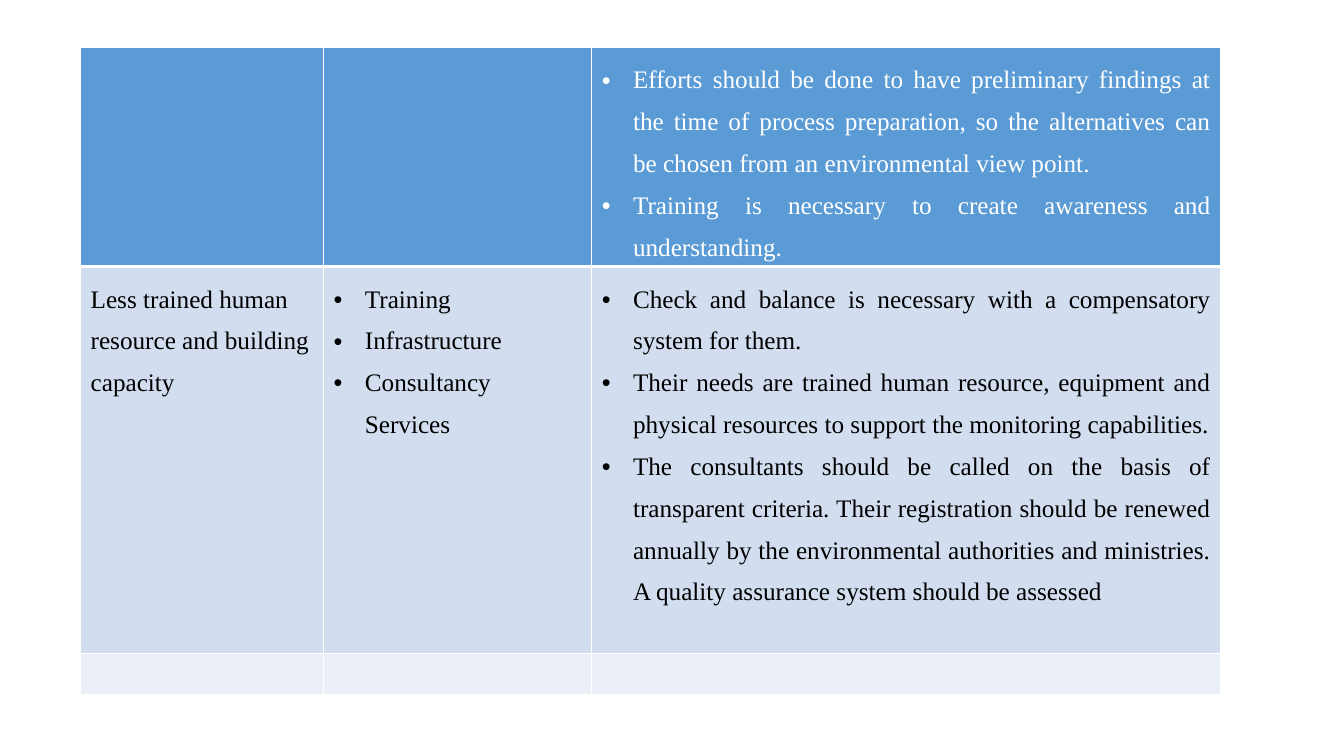
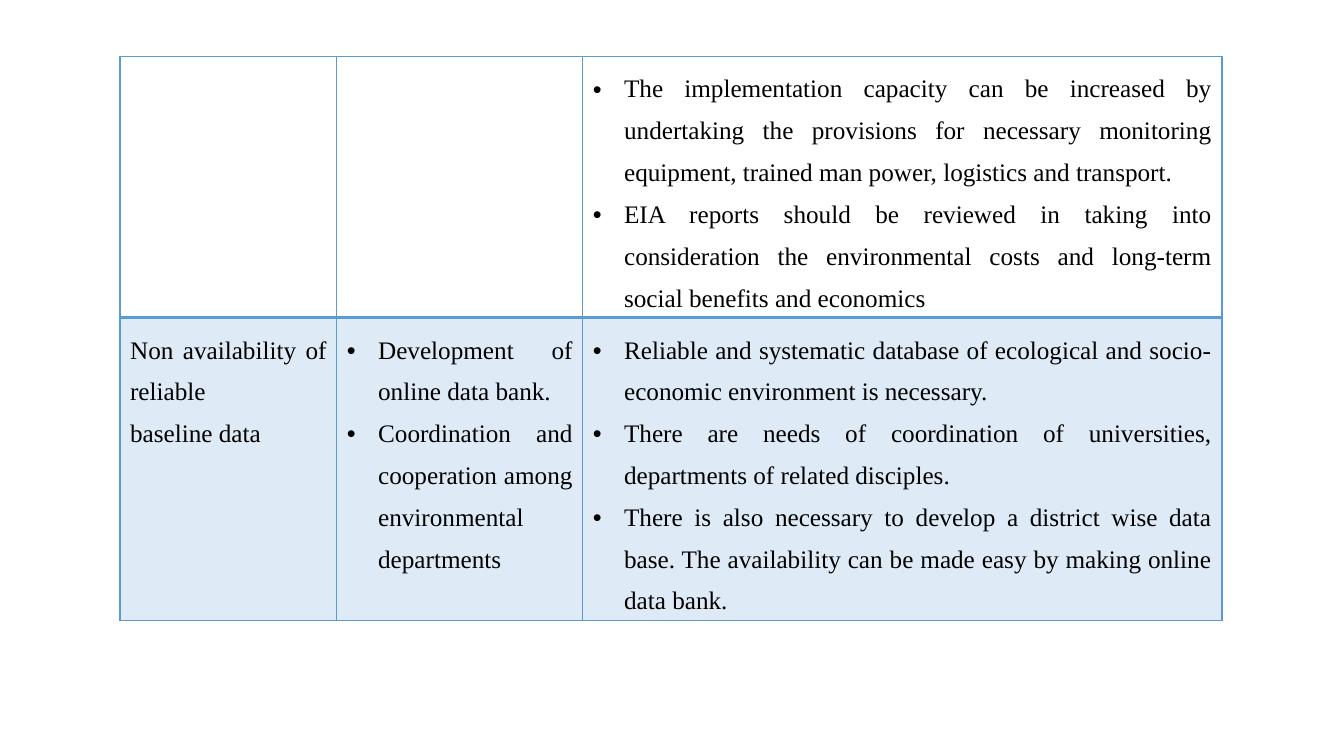
from dataclasses import dataclass
from typing import Optional

from lxml.etree import SubElement
from pptx import Presentation
from pptx.dml.color import RGBColor as RGB
from pptx.enum.text import PP_ALIGN as Align
from pptx.oxml.ns import qn
from pptx.util import Inches, Pt

COLORS = {
    "accent": "5B9BD5",
    "band": "D2DEEF",
    "pale": "EAEFF7",
    "white": "FFFFFF",
    "black": "000000",
}
FONT = "Times New Roman"
WIDTH, HEIGHT = Inches(13.33), Inches(7.5)
INDENT = Inches(0.31)


@dataclass(frozen=True)
class Cell:
    lines: tuple[str, ...] = ()
    bullet: bool = True


@dataclass(frozen=True)
class Row:
    height: float
    cells: tuple[Cell, ...]
    fill: Optional[str] = None
    alpha: int = 100
    color: str = "black"


@dataclass(frozen=True)
class Grid:
    left: float
    top: float
    columns: tuple[float, ...]
    rows: tuple[Row, ...]
    border: str
    header_rule: float


EMPTY = Cell()

GRIDS = (
    Grid(6, 6.27, (18.08, 19.95, 46.81), (
        Row(28.93, (EMPTY, EMPTY, Cell((
            "Efforts should be done to have preliminary findings at the time of process preparation, "
            "so the alternatives can be chosen from an environmental view point.",
            "Training is necessary to create awareness and understanding.",
        ))), fill="accent", color="white"),
        Row(51.2, (
            Cell(("Less trained human", "resource and building", "capacity"), bullet=False),
            Cell(("Training", "Infrastructure", "Consultancy Services")),
            Cell((
                "Check and balance is necessary with a compensatory system for them.",
                "Their needs are trained human resource, equipment and physical resources "
                "to support the monitoring capabilities.",
                "The consultants should be called on the basis of transparent criteria. "
                "Their registration should be renewed annually by the environmental authorities "
                "and ministries. A quality assurance system should be assessed",
            )),
        ), fill="band"),
        Row(5.47, (EMPTY, EMPTY, EMPTY), fill="pale"),
    ), border="white", header_rule=3),
    Grid(8.93, 7.47, (16.13, 18.3, 47.56), (
        Row(34.53, (EMPTY, EMPTY, Cell((
            "The implementation capacity can be increased by undertaking the provisions for "
            "necessary monitoring equipment, trained man power, logistics and transport.",
            "EIA reports should be reviewed in taking into consideration the environmental costs "
            "and long-term social benefits and economics",
        )))),
        Row(40, (
            Cell(("Non availability of reliable", "baseline data"), bullet=False),
            Cell((
                "Development of online data bank.",
                "Coordination and cooperation among environmental departments",
            )),
            Cell((
                "Reliable and systematic database of ecological and socio-economic environment is necessary.",
                "There are needs of coordination of universities, departments of related disciples.",
                "There is also necessary to develop a district wise data base. "
                "The availability can be made easy by making online data bank.",
            )),
        ), fill="accent", alpha=20),
    ), border="accent", header_rule=2),
)


def across(share: float) -> int:
    return round(WIDTH * share / 100)


def down(share: float) -> int:
    return round(HEIGHT * share / 100)


def add_text(p, text: str, *, color: str, bullet: bool = False, size: float = 18) -> None:
    p.alignment = Align.JUSTIFY
    p.line_spacing = 1.5
    if bullet:
        props = p._p.get_or_add_pPr()
        props.set("marL", str(INDENT))
        props.set("indent", str(-INDENT))
        SubElement(props, qn("a:buFont"), typeface="Arial")
        SubElement(props, qn("a:buChar"), char="•")
    r = p.add_run()
    r.text = text
    r.font.name, r.font.size = FONT, Pt(size)
    r.font.color.rgb = RGB.from_string(COLORS[color])


def set_borders(cell, color: str, top: float, bottom: float) -> None:
    props = cell._tc.get_or_add_tcPr()
    for side, width in {"L": 1, "R": 1, "T": top, "B": bottom}.items():
        line = SubElement(props, qn(f"a:ln{side}"), w=str(Pt(width)))
        SubElement(SubElement(line, qn("a:solidFill")), qn("a:srgbClr"), val=COLORS[color])


def set_fill(cell, row: Row) -> None:
    if row.fill is None:
        cell.fill.background()
        return
    cell.fill.solid()
    cell.fill.fore_color.rgb = RGB.from_string(COLORS[row.fill])
    if row.alpha < 100:
        tint = cell._tc.tcPr.find(f"{qn('a:solidFill')}/{qn('a:srgbClr')}")
        SubElement(tint, qn("a:alpha"), val=str(row.alpha * 1000))


def add_grid(s, grid: Grid) -> None:
    frame = s.shapes.add_table(
        len(grid.rows), len(grid.columns), across(grid.left), down(grid.top),
        across(sum(grid.columns)), down(sum(row.height for row in grid.rows)))
    table = frame.table
    table.first_row = table.horz_banding = False
    for column, share in zip(table.columns, grid.columns):
        column.width = across(share)
    for i, row in enumerate(grid.rows):
        table.rows[i].height = down(row.height)
        top = grid.header_rule if i == 1 else 1
        bottom = grid.header_rule if i == 0 else 1
        for j, content in enumerate(row.cells):
            cell = table.cell(i, j)
            set_borders(cell, grid.border, top, bottom)
            set_fill(cell, row)
            tf = cell.text_frame
            for k, line in enumerate(content.lines):
                p = tf.add_paragraph() if k else tf.paragraphs[0]
                add_text(p, line, color=row.color, bullet=content.bullet)


def main() -> None:
    prs = Presentation()
    prs.slide_width, prs.slide_height = WIDTH, HEIGHT
    blank = prs.slide_layouts.get_by_name("Blank")
    for grid in GRIDS:
        add_grid(prs.slides.add_slide(blank), grid)
    prs.save("out.pptx")


if __name__ == "__main__":
    main()
